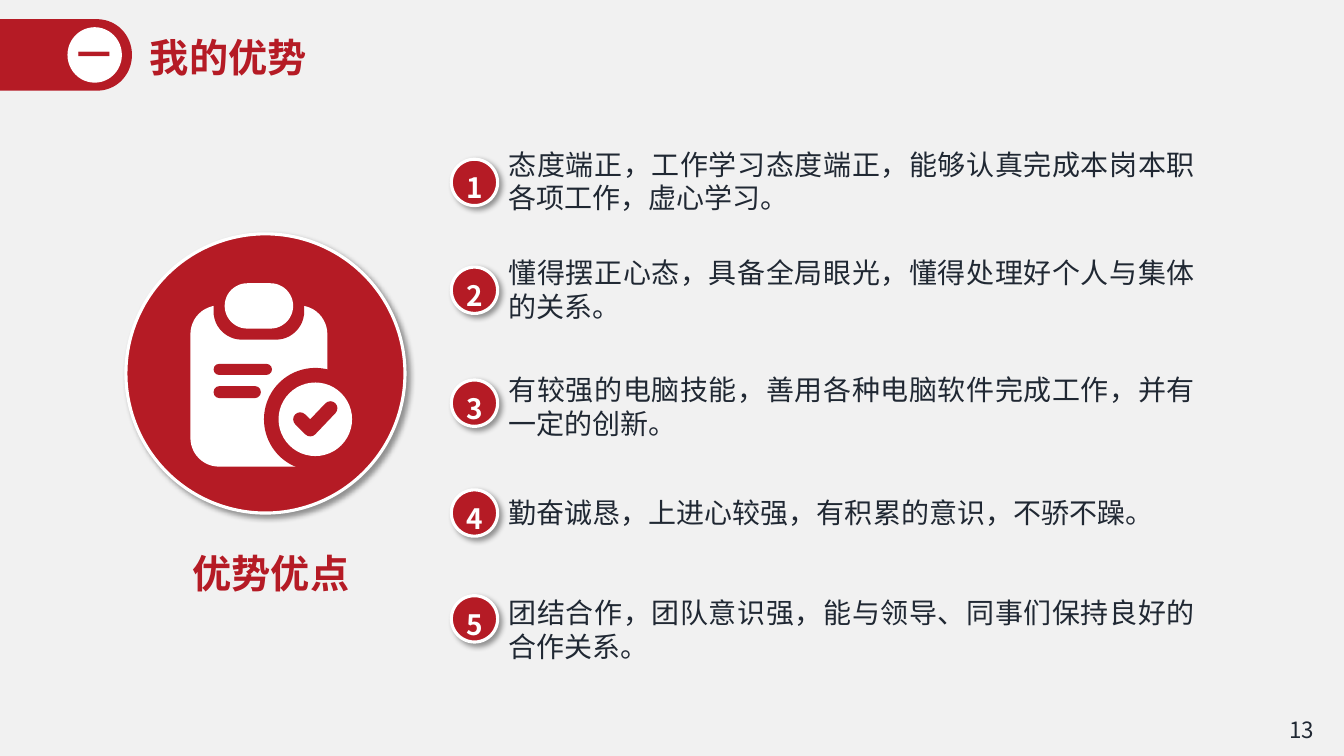
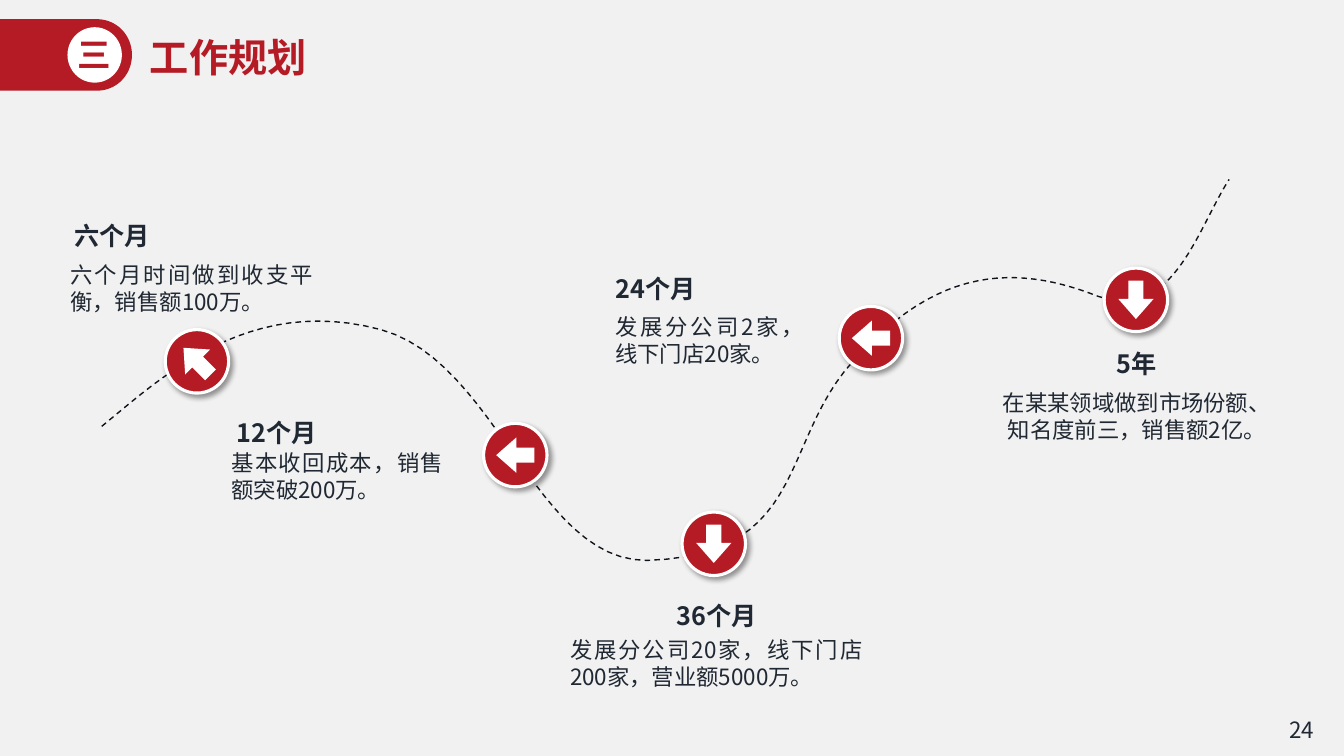
from lxml import etree
from pptx import Presentation
from pptx.dml.color import RGBColor
from pptx.enum.dml import MSO_LINE
from pptx.enum.shapes import MSO_SHAPE
from pptx.enum.text import MSO_ANCHOR, PP_ALIGN
from pptx.oxml.ns import qn
from pptx.util import Inches, Pt

OVAL = MSO_SHAPE.OVAL
ROUND = MSO_SHAPE.ROUNDED_RECTANGLE
ARROW = MSO_SHAPE.LEFT_ARROW
DASH = MSO_LINE.DASH
TOP, MID = MSO_ANCHOR.TOP, MSO_ANCHOR.MIDDLE
LEFT, MIDDLE, JUST = PP_ALIGN.LEFT, PP_ALIGN.CENTER, PP_ALIGN.JUSTIFY

COLS, ROWS = 133.4, 75
CELL = Inches(0.1)
FONT = "Noto Sans CJK SC"
HUES = {"red": "B51B25", "white": "FFFFFF", "ink": "202833",
        "back": "F1F1F1", "line": "10141A", "shade": "000000"}


def grid(*cells):
    return [round(c * CELL) for c in cells]


def hue(name):
    return RGBColor.from_string(HUES[name])


def bend(start, *parts, steps=24):
    dots = [start]
    for a, b, end in parts:
        root = dots[-1]
        for i in range(1, steps + 1):
            t = i / steps
            u = 1 - t
            dots.append(tuple(
                u**3 * p + 3 * u * u * t * q + 3 * u * t * t * r + t**3 * s
                for p, q, r, s in zip(root, a, b, end)))
    return dots


class Deck:
    def __init__(self):
        self.prs = Presentation()
        self.prs.slide_width, self.prs.slide_height = grid(COLS, ROWS)
        fill = self.prs.slide_master.background.fill
        fill.solid()
        fill.fore_color.rgb = hue("back")
        self.slide = None

    def page(self, mark, title, number):
        self.slide = self.prs.slides.add_slide(self.prs.slide_layouts[6])
        tab = bend((9.6, 1.9), ((11.6, 1.9), (13.1, 3.5), (13.1, 5.45)),
                   ((13.1, 7.4), (11.6, 9), (9.6, 9)))
        self.draw([(0, 1.9), *tab, (0, 9)], fill="red")
        self.shape(OVAL, 6.7, 2.7, 5.4, 5.5, "white")
        self.text(6.7, 2.9, 5.4, 5, mark, 24, "red", True, MIDDLE, wrap=False)
        self.text(13.9, 2.8, 37.8, 5.7, title, 28, "red", True)
        self.text(126.7, 70.6, 5, 3.7, number, 16, align=MIDDLE, wrap=False)

    def paint(self, shape, fill=None, line=None, width=1):
        shape.shadow.inherit = False
        if fill:
            shape.fill.solid()
            shape.fill.fore_color.rgb = hue(fill)
        else:
            shape.fill.background()
        if line:
            shape.line.color.rgb = hue(line)
            shape.line.width = Pt(width)
        else:
            shape.line.fill.background()
        return shape

    def shape(self, kind, x, y, w, h, fill, line=None, width=1):
        shape = self.slide.shapes.add_shape(kind, *grid(x, y, w, h))
        return self.paint(shape, fill, line, width)

    def pill(self, x, y, w, h, fill, curve=0.5):
        self.shape(ROUND, x, y, w, h, fill).adjustments[0] = curve

    def ring(self, x, y, size, fill):
        return self.shape(OVAL, x - size / 2, y - size / 2, size, size, fill)

    def disc(self, x, y, size):
        disc = self.shape(OVAL, x, y, size, size, "red", "white", 2.25)
        glow = disc._element.spPr.find(qn("a:effectLst"))
        drop = etree.SubElement(glow, qn("a:outerShdw"), blurRad=str(Pt(4)),
                                dist=str(Pt(3)), dir="2700000", algn="tl",
                                rotWithShape="0")
        tint = etree.SubElement(drop, qn("a:srgbClr"), val=HUES["shade"])
        etree.SubElement(tint, qn("a:alpha"), val="40000")
        return disc

    def draw(self, dots, fill=None, line=None, width=1):
        dots = [grid(*dot) for dot in dots]
        pen = self.slide.shapes.build_freeform(*dots[0])
        pen.add_line_segments(dots[1:], close=bool(fill))
        return self.paint(pen.convert_to_shape(), fill, line, width)

    def put(self, frame, words, size, tone="ink", bold=False, align=LEFT):
        para = frame.paragraphs[0]
        para.alignment = align
        para.line_spacing = Pt(size * 1.2)
        run = para.add_run()
        run.text = words
        font = run.font
        font.name, font.size, font.bold = FONT, Pt(size), bold
        font.color.rgb = hue(tone)
        etree.SubElement(run._r.get_or_add_rPr(), qn("a:ea"), typeface=FONT)

    def text(self, x, y, w, h, words, size, tone="ink", bold=False,
             align=LEFT, wrap=True):
        box = self.slide.shapes.add_textbox(*grid(x, y, w, h))
        frame = box.text_frame
        frame.word_wrap = wrap
        frame.vertical_anchor = TOP
        self.put(frame, words, size, tone, bold, align)

    def badge(self, x, y, size, words):
        frame = self.disc(x, y, size).text_frame
        frame.margin_left = frame.margin_right = frame.margin_bottom = 0
        frame.margin_top = CELL
        frame.vertical_anchor = MID
        frame.word_wrap = False
        self.put(frame, words, 20, "white", True, MIDDLE)

    def stop(self, x, y, turn, size=6.3, w=3.8, h=3.5):
        self.disc(x, y, size)
        arrow = self.shape(ARROW, x + (size - w) / 2, y + (size - h) / 2,
                           w, h, "white")
        arrow.adjustments[0] = 0.43
        arrow.adjustments[1] = 0.57
        arrow.rotation = turn

    def board(self):
        self.disc(12.5, 23.2, 27.7)
        self.pill(18.9, 30.3, 13.6, 16, "white", 0.21)
        self.pill(21.2, 27, 9, 6.7, "red", 0.42)
        self.pill(22.3, 28.1, 6.8, 4.5, "white")
        self.pill(21.2, 36.1, 5.8, 1.1, "red")
        self.pill(21.2, 38.3, 4.7, 1.2, "red")
        self.ring(31.3, 41.6, 10.2, "red")
        self.ring(31.3, 41.6, 7.3, "white")
        tick = self.draw([(29.8, 41.6), (30.8, 42.6), (32.8, 40.5)],
                         line="red", width=10)
        edge = tick._element.spPr.find(qn("a:ln"))
        edge.set("cap", "rnd")
        etree.SubElement(edge, qn("a:round"))


POINTS = [
    (15.8, 14.1, "态度端正，工作学习态度端正，能够认真完成本岗本职各项工作，虚心学习。"),
    (26.5, 24.9, "懂得摆正心态，具备全局眼光，懂得处理好个人与集体的关系。"),
    (37.7, 36.5, "有较强的电脑技能，善用各种电脑软件完成工作，并有一定的创新。"),
    (48.6, 48.7, "勤奋诚恳，上进心较强，有积累的意识，不骄不躁。"),
    (59.1, 58.6, "团结合作，团队意识强，能与领导、同事们保持良好的合作关系。"),
]
STOPS = [(16.4, 32.7, 45), (48, 42, 0), (67.7, 50.8, 270),
         (83.3, 30.4, 0), (109.6, 26.6, 270)]
GOALS = [
    (6.4, 21.4, LEFT, "六个月", 6, 25.4, 26.1, JUST,
     "六个月时间做到收支平衡，销售额100万。"),
    (22.5, 40.9, LEFT, "12个月", 22, 44.1, 23, JUST,
     "基本收回成本，销售额突破200万。"),
    (61.5, 59.1, MIDDLE, "36个月", 55.6, 62.6, 31, JUST,
     "发展分公司20家，线下门店200家，营业额5000万。"),
    (60.1, 26.6, LEFT, "24个月", 60.1, 30.6, 20.7, JUST,
     "发展分公司2家，线下门店20家。"),
    (103.2, 34.1, MIDDLE, "5年", 98.2, 38.1, 29.3, MIDDLE,
     "在某某领域做到市场份额、知名度前三，销售额2亿。"),
]
ROAD = bend(
    (10.1, 42.3),
    ((16.1, 37.4), (24.7, 29.2), (37.8, 32.7)),
    ((49.4, 35.9), (53.1, 55.6), (64.2, 55.6)),
    ((80.9, 55.1), (77.1, 42.8), (85.7, 34.8)),
    ((94.1, 25.8), (102.1, 26.7), (109, 29.4)),
    ((116.4, 32), (118.8, 22.8), (122, 17.8)))


def merits(deck):
    deck.page("一", "我的优势", "13")
    deck.board()
    deck.text(14.7, 54, 24.4, 5.7, "优势优点", 28, "red", True, MIDDLE)
    for i, (spot, top, words) in enumerate(POINTS, 1):
        deck.badge(44.8, spot, 4.6, str(i))
        deck.text(49.5, top, 70.1, 7.7, words, 20, align=JUST)


def plan(deck):
    deck.page("三", "工作规划", "24")
    deck.draw(ROAD, line="line").line.dash_style = DASH
    for x, y, turn in STOPS:
        deck.stop(x, y, turn)
    for x, y, side, head, left, top, w, align, words in GOALS:
        deck.text(x, y, 19.3, 4, head, 18, bold=True, align=side)
        deck.text(left, top, w, 6.4, words, 16, align=align)


def main():
    deck = Deck()
    merits(deck)
    plan(deck)
    deck.prs.save("out.pptx")


if __name__ == "__main__":
    main()
